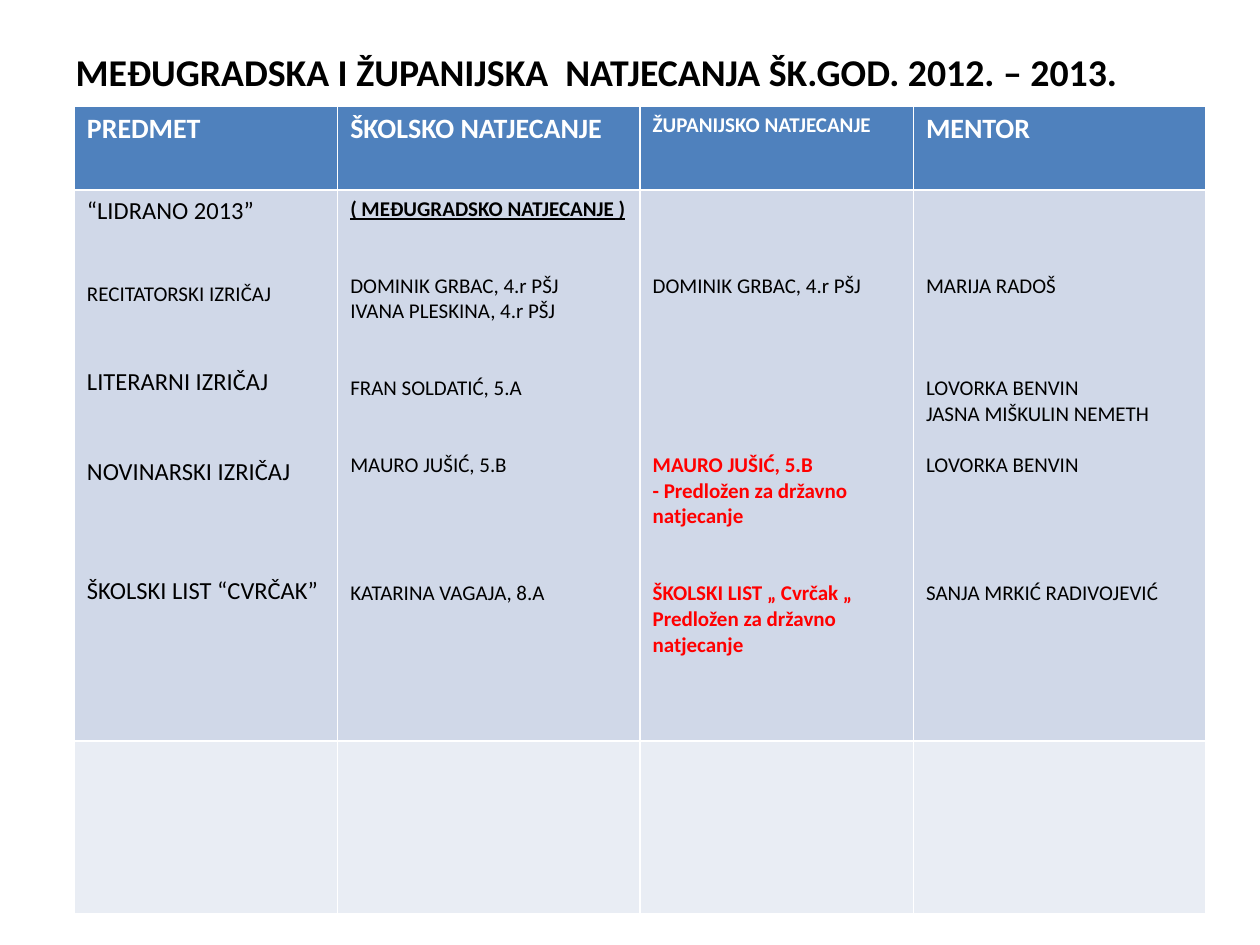
from dataclasses import dataclass

from pptx import Presentation
from pptx.dml.color import RGBColor
from pptx.enum.text import MSO_ANCHOR, MSO_AUTO_SIZE, PP_ALIGN
from pptx.util import Inches, Pt

FONT = "Calibri"
COLORS = {
    "header": "4F81BD",
    "body": "D0D8E8",
    "empty": "E9EDF4",
    "light": "FFFFFF",
    "dark": "000000",
    "accent": "FF0000",
}
LINE_HEIGHT = 14.65  # points taken by one line of 12 pt text
CELL_MARGIN = 0.05


@dataclass
class Entry:
    """A paragraph; gap is the space above it, in 12 pt lines."""
    text: str
    gap: float = 0
    size: float = 12
    bold: bool = False
    underline: bool = False
    color: str = "dark"


@dataclass
class Column:
    width: float
    header: Entry
    entries: list[Entry]


def heading(text: str, size: float = 16) -> Entry:
    return Entry(text, size=size, bold=True, color="light")


def subject(text: str, gap: float = 0) -> Entry:
    return Entry(text, gap, size=14)


def nominated(text: str, gap: float = 0) -> Entry:
    return Entry(text, gap, bold=True, color="accent")


COLUMNS = [
    Column(2.09, heading("PREDMET"), [
        subject("“LIDRANO 2013”"),
        Entry("RECITATORSKI IZRIČAJ", 2.17),
        subject("LITERARNI IZRIČAJ", 2.33),
        subject("NOVINARSKI IZRIČAJ", 2.33),
        subject("ŠKOLSKI LIST “CVRČAK”", 3.5),
    ]),
    Column(2.4, heading("ŠKOLSKO NATJECANJE"), [
        Entry("( MEĐUGRADSKO NATJECANJE )", bold=True, underline=True),
        Entry("DOMINIK GRBAC, 4.r PŠJ", 2),
        Entry("IVANA PLESKINA, 4.r PŠJ"),
        Entry("FRAN SOLDATIĆ, 5.A", 2),
        Entry("MAURO JUŠIĆ, 5.B", 2),
        Entry("KATARINA VAGAJA, 8.A", 4),
    ]),
    Column(2.17, heading("ŽUPANIJSKO NATJECANJE", 12), [
        Entry("DOMINIK GRBAC, 4.r PŠJ", 3),
        nominated("MAURO JUŠIĆ, 5.B", 6),
        nominated("- Predložen za državno natjecanje"),
        nominated("ŠKOLSKI LIST „ Cvrčak „", 2),
        nominated("Predložen za državno natjecanje"),
    ]),
    Column(2.32, heading("MENTOR"), [
        Entry("MARIJA RADOŠ", 3),
        Entry("LOVORKA BENVIN", 3),
        Entry("JASNA MIŠKULIN NEMETH"),
        Entry("LOVORKA BENVIN", 1),
        Entry("SANJA MRKIĆ RADIVOJEVIĆ", 4),
    ]),
]
ROW_HEIGHTS = [0.67, 4.37, 1.37]


def write_entry(paragraph, entry: Entry) -> None:
    paragraph.text = entry.text
    font = paragraph.font
    font.name = FONT
    font.size = Pt(entry.size)
    font.bold = entry.bold
    font.underline = entry.underline
    font.color.rgb = RGBColor.from_string(COLORS[entry.color])


def fill_cell(cell, fill: str, entries: list[Entry]) -> None:
    """Colour a cell and write its entries; the first gap becomes the top margin."""
    cell.fill.solid()
    cell.fill.fore_color.rgb = RGBColor.from_string(COLORS[fill])
    for index, entry in enumerate(entries):
        gap = Pt(entry.gap * LINE_HEIGHT)
        if index == 0:
            paragraph = cell.text_frame.paragraphs[0]
            cell.margin_top = Inches(CELL_MARGIN) + gap
        else:
            paragraph = cell.text_frame.add_paragraph()
            paragraph.space_before = gap
        write_entry(paragraph, entry)


def add_title(slide) -> None:
    title = slide.shapes.title
    title.left, title.top = Inches(0.5), Inches(0.21)
    title.width, title.height = Inches(9.14), Inches(0.71)
    frame = title.text_frame
    frame.auto_size = MSO_AUTO_SIZE.NONE
    frame.vertical_anchor = MSO_ANCHOR.MIDDLE
    paragraph = frame.paragraphs[0]
    paragraph.alignment = PP_ALIGN.LEFT
    write_entry(paragraph, Entry(
        "MEĐUGRADSKA I ŽUPANIJSKA  NATJECANJA ŠK.GOD. 2012. – 2013.",
        size=21.6, bold=True))


def add_results_table(slide) -> None:
    table = slide.shapes.add_table(
        len(ROW_HEIGHTS), len(COLUMNS), Inches(0.59), Inches(0.84),
        Inches(sum(column.width for column in COLUMNS)),
        Inches(sum(ROW_HEIGHTS))).table
    for row, height in zip(table.rows, ROW_HEIGHTS):
        row.height = Inches(height)
    for index, column in enumerate(COLUMNS):
        table.columns[index].width = Inches(column.width)
        fill_cell(table.cell(0, index), "header", [column.header])
        fill_cell(table.cell(1, index), "body", column.entries)
        fill_cell(table.cell(2, index), "empty", [])


def main() -> None:
    presentation = Presentation()
    presentation.slide_width = Inches(10)
    presentation.slide_height = Inches(7.5)
    slide = presentation.slides.add_slide(
        presentation.slide_layouts.get_by_name("Title Only"))
    add_title(slide)
    add_results_table(slide)
    presentation.save("out.pptx")


if __name__ == "__main__":
    main()
